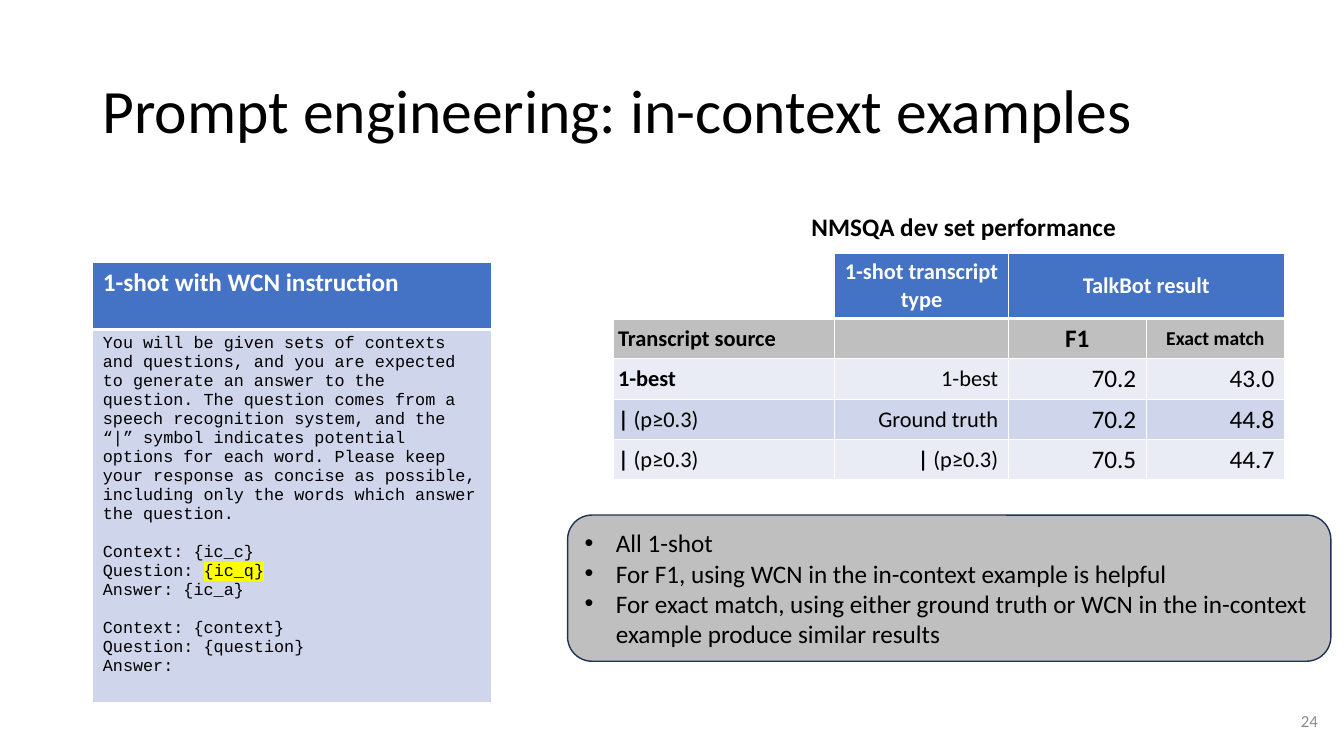
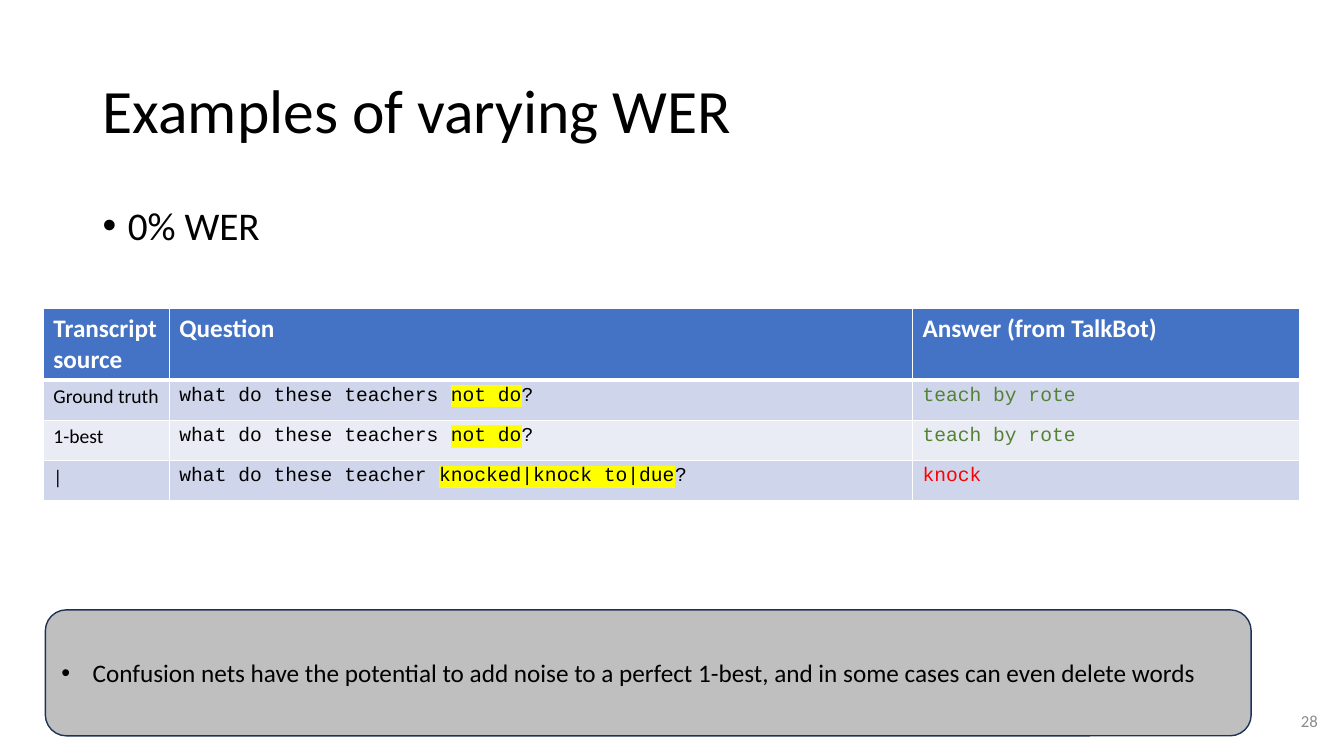
from lxml import etree
from pptx import Presentation
from pptx.dml.color import RGBColor
from pptx.enum.shapes import MSO_SHAPE
from pptx.enum.text import MSO_ANCHOR, PP_ALIGN
from pptx.oxml.ns import qn
from pptx.util import Inches, Pt

ROUND = MSO_SHAPE.ROUNDED_RECTANGLE
TOP, MID = MSO_ANCHOR.TOP, MSO_ANCHOR.MIDDLE
LEFT, MIDDLE, RIGHT = PP_ALIGN.LEFT, PP_ALIGN.CENTER, PP_ALIGN.RIGHT
SANS, MONO = "Calibri", "Courier New"
BLACK, WHITE, BLUE, GREY = "000000", "FFFFFF", "4472C4", "BFBFBF"
DARK, LIGHT, EDGE, PALE = "CFD5EA", "E9EBF5", "1E3256", "8C8C8C"
GREEN, RED, YELLOW = "548235", "FF0000", "FFFF00"
HEAD = {"size": 18, "bold": True, "color": WHITE}
MODEL = "TalkBot"


def rgb(code):
    return RGBColor.from_string(code)


def add_node(parent, tag, **attrs):
    return etree.SubElement(parent, qn(tag), attrs)


def mark(run, code):
    """Highlight a run that already has its colour."""
    props = run.font.fill._xPr
    node = etree.Element(qn("a:highlight"))
    add_node(node, "a:srgbClr", val=code)
    props.find(qn("a:solidFill")).addnext(node)


def add_run(para, text, size=18, name=SANS, color=BLACK, bold=False, light=None):
    run = para.add_run()
    run.text = text
    for key, value in {"size": Pt(size), "name": name, "bold": bold}.items():
        setattr(run.font, key, value)
    run.font.color.rgb = rgb(color)
    if light:
        mark(run, light)


def write(frame, paras, form=None, indent=0, **style):
    """Fill a frame; a paragraph is a string or a list of (text, style) runs."""
    for i, runs in enumerate(paras):
        para = frame.paragraphs[0] if i == 0 else frame.add_paragraph()
        for key, value in (form or {}).items():
            setattr(para, key, value)
        if indent:
            props = para._p.get_or_add_pPr()
            props.set("marL", str(Inches(indent)))
            props.set("indent", str(-Inches(indent)))
            add_node(props, "a:buFont", typeface="Arial")
            add_node(props, "a:buChar", char="•")
        for text, own in [(runs, {})] if isinstance(runs, str) else runs:
            add_run(para, text, **{**style, **own})


def add_text(slide, box, paras, anchor=TOP, wrap=True, **style):
    frame = slide.shapes.add_textbox(*map(Inches, box)).text_frame
    frame.word_wrap = wrap
    frame.vertical_anchor = anchor
    write(frame, paras, **style)


def add_note(slide, box, points):
    note = slide.shapes.add_shape(ROUND, *map(Inches, box))
    note.shadow.inherit = False
    note.fill.solid()
    note.fill.fore_color.rgb = rgb(GREY)
    note.line.color.rgb = rgb(EDGE)
    note.line.width = Pt(1)
    note.text_frame.word_wrap = True
    note.text_frame.vertical_anchor = MID
    write(note.text_frame, points, {"alignment": LEFT}, 0.31)


def add_edges(cell, row):
    """White borders, with a thick rule below the header row."""
    props = cell._tc.get_or_add_tcPr()
    thick = {"T": row == 1, "B": row == 0}
    for side in "LRTB":
        line = add_node(props, "a:ln" + side, w=str(Pt(3 if thick.get(side) else 1)))
        add_node(add_node(line, "a:solidFill"), "a:srgbClr", val=WHITE)


def add_grid(slide, spot, cols, rows, fills):
    size = sum(cols), sum(rows)
    frame = slide.shapes.add_table(len(rows), len(cols), *map(Inches, (*spot, *size)))
    grid = frame.table
    grid.first_row = grid.horz_banding = False
    for parts, sizes, key in ((grid.columns, cols, "width"), (grid.rows, rows, "height")):
        for part, value in zip(parts, sizes):
            setattr(part, key, Inches(value))
    for r, fill in enumerate(fills):
        for c in range(len(cols)):
            cell = grid.cell(r, c)
            add_edges(cell, r)
            cell.fill.solid()
            cell.fill.fore_color.rgb = rgb(fill)
    return grid


def add_base(deck, title, number):
    slide = deck.slides.add_slide(deck.slide_layouts[6])
    add_text(slide, (0.92, 0.4, 11.5, 1.45), [title], MID,
             form={"line_spacing": 0.9}, size=44)
    add_text(slide, (10.17, 6.95, 3, 0.4), [number], MID,
             form={"alignment": RIGHT}, size=12, color=PALE)
    return slide


def add_scores(slide, spot):
    grid = add_grid(slide, spot, (2.2, 1.72, 1.37, 1.37), (0.65,) + (0.4,) * 4,
                    (BLUE, GREY, LIGHT, DARK, LIGHT))
    grid.cell(0, 0).fill.background()
    grid.cell(0, 2).merge(grid.cell(0, 3))

    def put(r, c, text, align=None, tight=True, **style):
        cell = grid.cell(r, c)
        cell.vertical_anchor = MID
        if tight:
            cell.margin_left = cell.margin_right = Inches(0.05)
        write(cell.text_frame, [text], {"alignment": align}, **style)

    for c, text in ((1, "1-shot transcript type"), (2, f"{MODEL} result")):
        put(0, c, text, MIDDLE, **{**HEAD, "size": 16})
    put(1, 0, "Transcript source", size=16, bold=True)
    put(1, 2, "F1", MIDDLE, bold=True)
    put(1, 3, "Exact match", MIDDLE, size=14, bold=True)
    best = [("1-best", {"bold": True})]
    net = [("| ", {"bold": True}), ("(p≥0.3)", {})]
    rows = ((best, "1-best", "70.2", "43.0"),
            (net, "Ground truth", "70.2", "44.8"),
            (net, net, "70.5", "44.7"))
    for r, (source, shot, *scores) in enumerate(rows, 2):
        put(r, 0, source, size=16)
        put(r, 1, shot, RIGHT, False, size=16)
        for c, score in enumerate(scores, 2):
            put(r, c, score, RIGHT, False)


def add_prompt(slide, spot):
    grid = add_grid(slide, spot, (3.96,), (0.67, 3.7), (BLUE, DARK))
    write(grid.cell(0, 0).text_frame, ["1-shot with WCN instruction"], **HEAD)
    frame = grid.cell(1, 0).text_frame
    write(frame, [
        "You will be given sets of contexts and questions, and you are expected to "
        "generate an answer to the question. The question comes from a speech "
        "recognition system, and the “|” symbol indicates potential options for each "
        "word. Please keep your response as concise as possible, including only the "
        "words which answer the question.",
        "Context: {ic_c}",
        [("Question: ", {}), ("{ic_q}", {"light": YELLOW})],
        "Answer: {ic_a}",
        "Context: {context}",
        "Question: {question}",
        "Answer:",
    ], size=12, name=MONO)
    for i in (1, 4):
        frame.paragraphs[i].space_before = Pt(13.6)


def add_answers(slide, spot):
    grid = add_grid(slide, spot, (1.25, 7.37, 3.84), (0.71,) + (0.4,) * 3,
                    (BLUE, DARK, LIGHT, DARK))
    for c, text in enumerate(("Transcript source", "Question", f"Answer (from {MODEL})")):
        write(grid.cell(0, c).text_frame, [text], **HEAD)
    rows = (("Ground truth", "what do these teachers ", "not do", "teach by rote", GREEN),
            ("1-best", "what do these teachers ", "not do", "teach by rote", GREEN),
            ("|", "what do these teacher ", "knocked|knock to|due", "knock", RED))
    for r, (source, start, key, answer, color) in enumerate(rows, 1):
        ask = [(start, {}), (key, {"light": YELLOW}), ("?", {})]
        write(grid.cell(r, 0).text_frame, [source], size=14)
        write(grid.cell(r, 1).text_frame, [ask], size=14, name=MONO)
        write(grid.cell(r, 2).text_frame, [answer], size=14, name=MONO, color=color)


def build_prompts(deck):
    slide = add_base(deck, "Prompt engineering: in-context examples", "24")
    add_scores(slide, (6.08, 2.51))
    add_text(slide, (7.95, 2.05, 3.25, 0.4), ["NMSQA dev set performance"],
             wrap=False, bold=True)
    add_note(slide, (5.63, 5.11, 7.57, 1.45), [
        "All 1-shot",
        "For F1, using WCN in the in-context example is helpful",
        "For exact match, using either ground truth or WCN in the in-context "
        "example produce similar results",
    ])
    add_prompt(slide, (0.92, 2.6))


def build_errors(deck):
    slide = add_base(deck, "Examples of varying WER", "28")
    add_text(slide, (0.92, 2, 11.5, 5.1), ["0% WER"], indent=0.25, size=28,
             form={"line_spacing": 0.9, "space_before": Pt(10)})
    add_note(slide, (0.45, 6.05, 11.96, 1.25), [
        "Confusion nets have the potential to add noise to a perfect 1-best, "
        "and in some cases can even delete words",
    ])
    add_answers(slide, (0.43, 3.06))


def main():
    deck = Presentation()
    deck.slide_width, deck.slide_height = Inches(13.33), Inches(7.5)
    build_prompts(deck)
    build_errors(deck)
    deck.save("out.pptx")


if __name__ == "__main__":
    main()
